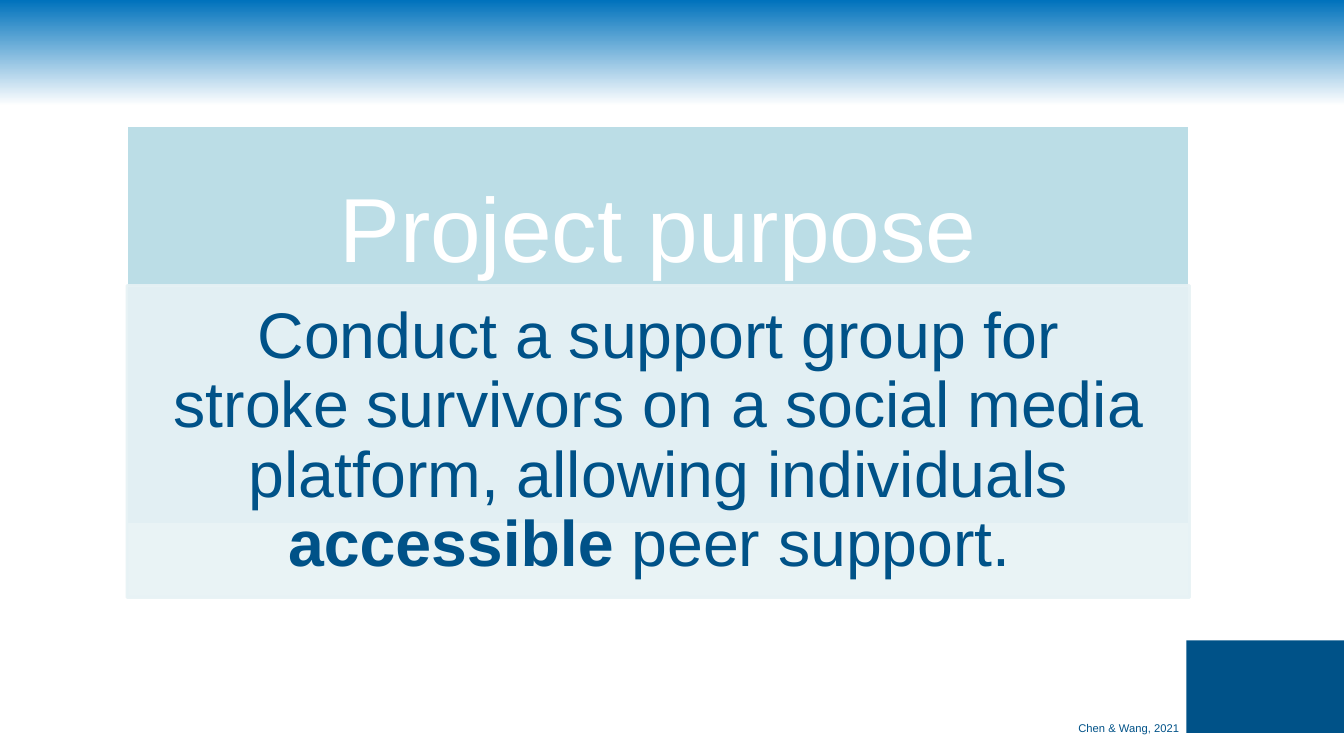
from lxml import etree
from pptx import Presentation
from pptx.dml.color import RGBColor
from pptx.enum.shapes import MSO_SHAPE
from pptx.enum.text import MSO_ANCHOR, MSO_AUTO_SIZE, PP_ALIGN
from pptx.oxml.ns import qn
from pptx.util import Pt

RECTANGLE = MSO_SHAPE.RECTANGLE
MIDDLE = MSO_ANCHOR.MIDDLE
NO_AUTOFIT = MSO_AUTO_SIZE.NONE
CENTER, LEFT = PP_ALIGN.CENTER, PP_ALIGN.LEFT
TITLE_ONLY = 5
EMU_PER_PX = 9525


class Theme:
    font = "Arial"
    sky = "0072BC"
    navy = "005288"
    white = "FFFFFF"
    aqua = "BBDDE6"
    pale = "E7F2F5"
    title_size = 65
    purpose_size = 46
    citation_size = 8
    border = 2


def px(value):
    return value * EMU_PER_PX


def rgb(color):
    return RGBColor.from_string(color)


def set_values(target, values):
    for name, value in values.items():
        setattr(target, name, value)


def place(shape, left, top, width, height):
    set_values(shape, {"left": px(left), "top": px(top),
                       "width": px(width), "height": px(height)})


def paint(shape, fill, line=None, opacity=100):
    """Fill and outline a shape; opacity is a percentage for both."""
    shape.fill.solid()
    shape.fill.fore_color.rgb = rgb(fill)
    if line:
        shape.line.color.rgb = rgb(line)
        shape.line.width = Pt(Theme.border)
    else:
        shape.line.fill.background()
    if opacity < 100:
        for color in shape.element.spPr.iter(qn("a:srgbClr")):
            etree.SubElement(color, qn("a:alpha"), val=str(opacity * 1000))


def add_rectangle(page, bounds, fill, line=None, opacity=100):
    box = page.shapes.add_shape(RECTANGLE, *map(px, bounds))
    box.shadow.inherit = False
    paint(box, fill, line, opacity)
    return box


def write(box, spans, size, color, insets, align=CENTER, spacing=0.9, wrap=True):
    """Write one paragraph of (text, bold) spans; insets run left, top, right, bottom."""
    frame = box.text_frame
    sides = ("margin_left", "margin_top", "margin_right", "margin_bottom")
    set_values(frame, dict(zip(sides, map(px, insets))))
    set_values(frame, {"word_wrap": wrap, "auto_size": NO_AUTOFIT,
                       "vertical_anchor": MIDDLE})
    para = frame.paragraphs[0]
    set_values(para, {"alignment": align, "line_spacing": spacing, "space_before": Pt(0)})
    for text, bold in spans:
        span = para.add_run()
        span.text = text
        set_values(span.font, {"name": Theme.font, "size": Pt(size), "bold": bold})
        span.font.color.rgb = rgb(color)


def paint_background(page):
    fill = page.background.fill
    fill.gradient()
    fill.gradient_angle = 270
    stops = ((0, Theme.sky), (0.14, Theme.white))
    for stop, (position, color) in zip(fill.gradient_stops, stops):
        stop.position = position
        stop.color.rgb = rgb(color)


def add_title(page):
    title = page.shapes.title
    place(title, 121, 120, 1012, 379)
    paint(title, Theme.aqua, Theme.white)
    write(title, [("Project purpose", False)], Theme.title_size, Theme.white,
          (49, 49, 49, 224))


def add_purpose(page):
    panel = add_rectangle(page, (121, 272, 1012, 297), Theme.pale, Theme.pale, 90)
    spans = [
        ("Conduct a support group for stroke survivors on a social media "
         "platform, allowing individuals ", False),
        ("accessible", True),
        (" peer support. ", False),
    ]
    write(panel, spans, Theme.purpose_size, Theme.navy, (35, 6, 35, 6))


def add_citation(page):
    box = page.shapes.add_textbox(*map(px, (1017, 682, 199, 23)))
    write(box, [("Chen & Wang, 2021", False)], Theme.citation_size, Theme.navy,
          (10, 5, 10, 5), LEFT, 1.0)


def main():
    deck = Presentation()
    set_values(deck, {"slide_width": px(1280), "slide_height": px(720)})
    page = deck.slides.add_slide(deck.slide_layouts[TITLE_ONLY])
    paint_background(page)
    add_title(page)
    add_rectangle(page, (1130, 610, 150, 88), Theme.navy)
    add_purpose(page)
    add_citation(page)
    deck.save("out.pptx")


if __name__ == "__main__":
    main()
